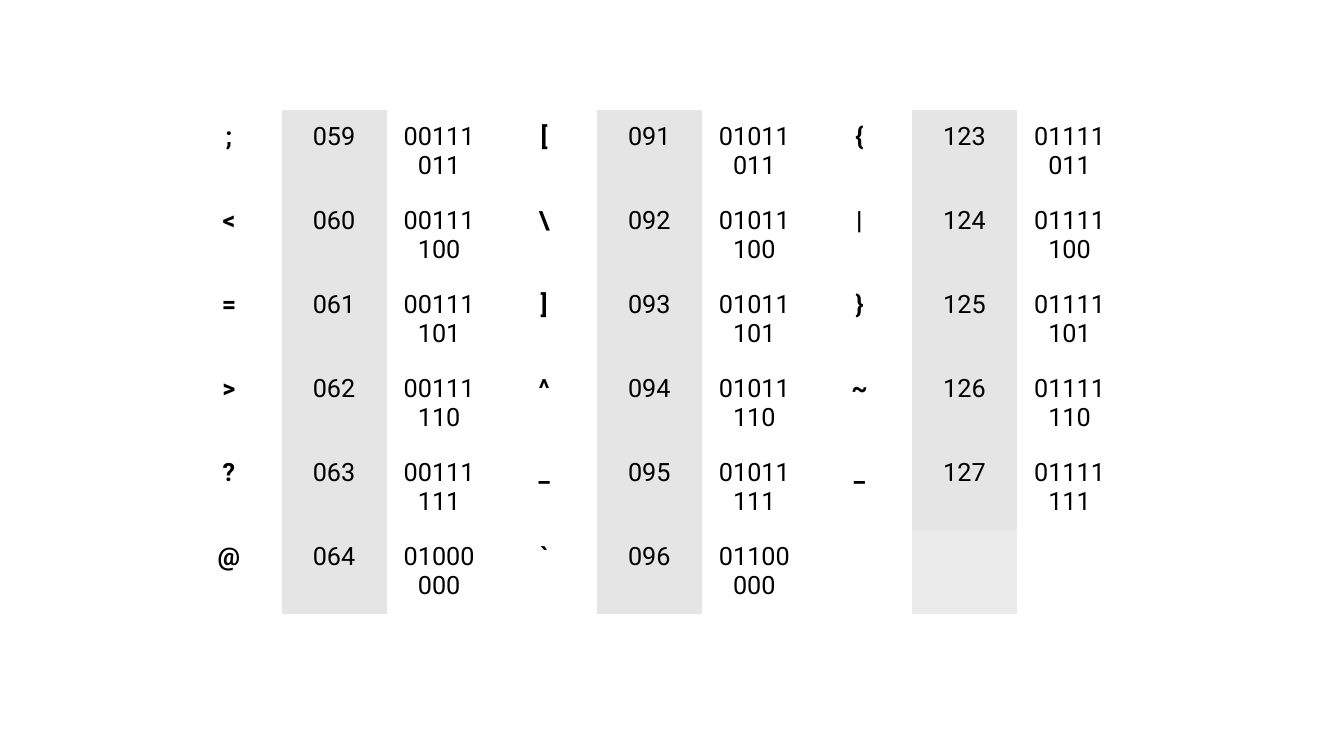
import dataclasses

import pptx
import pptx.dml.color
import pptx.enum.text
import pptx.oxml.ns
import pptx.util

Inches = pptx.util.Inches
RGB = pptx.dml.color.RGBColor


@dataclasses.dataclass(frozen=True)
class Theme:
    font: str = "Roboto"
    size: int = 18
    text: RGB = RGB.from_string("000000")
    plain: RGB = RGB.from_string("FFFFFF")
    decimal_band: RGB = RGB.from_string("E5E5E5")
    empty_band: RGB = RGB.from_string("EBEBEB")
    margin: float = 0.12


THEME = Theme()
NO_GRID_STYLE = "{2D5ABB26-0587-4C30-8999-92F81FD0307C}"

# Each group holds a symbol, a decimal and a binary column
FIRST_CODES = (59, 91, 123)
CODES_PER_GROUP = 6
LAST_CODE = 127
FIELDS = 3


def code_fields(code):
    """Return the symbol, decimal and binary text of a character code."""
    if code > LAST_CODE:
        return ("",) * FIELDS
    symbol = "_" if code == LAST_CODE else chr(code)
    return symbol, f"{code:03d}", f"{code:08b}"


def fill_cell(cell, value, fill, bold):
    cell.fill.solid()
    cell.fill.fore_color.rgb = fill
    cell.margin_left = cell.margin_right = Inches(THEME.margin)
    cell.margin_top = cell.margin_bottom = Inches(THEME.margin)
    if not value:
        return
    paragraph = cell.text_frame.paragraphs[0]
    paragraph.text = value
    paragraph.alignment = pptx.enum.text.PP_ALIGN.CENTER
    font = paragraph.runs[0].font
    font.name = THEME.font
    font.size = pptx.util.Pt(THEME.size)
    font.bold = bold
    font.color.rgb = THEME.text


def add_code_table(slide, left, top, width, height):
    """Place the character code table in the given box."""
    column_count = FIELDS * len(FIRST_CODES)
    codes = slide.shapes.add_table(
        CODES_PER_GROUP, column_count,
        Inches(left), Inches(top), Inches(width), Inches(height)).table

    # Plain style without banding or grid lines
    codes.first_row = codes.horz_banding = False
    style_id = codes._tbl.tblPr.find(pptx.oxml.ns.qn("a:tableStyleId"))
    style_id.text = NO_GRID_STYLE

    # Character codes run down each group
    for group, first_code in enumerate(FIRST_CODES):
        for row in range(CODES_PER_GROUP):
            for field, value in enumerate(code_fields(first_code + row)):
                fill = THEME.plain
                if field == 1:
                    fill = THEME.decimal_band if value else THEME.empty_band
                cell = codes.cell(row, group * FIELDS + field)
                fill_cell(cell, value, fill, bold=field == 0)


def main():
    deck = pptx.Presentation()
    deck.slide_width, deck.slide_height = Inches(13.33), Inches(7.5)
    slide = deck.slides.add_slide(deck.slide_layouts.get_by_name("Blank"))
    add_code_table(slide, 1.75, 1.09, 9.38, 5)
    deck.save("out.pptx")


if __name__ == "__main__":
    main()
